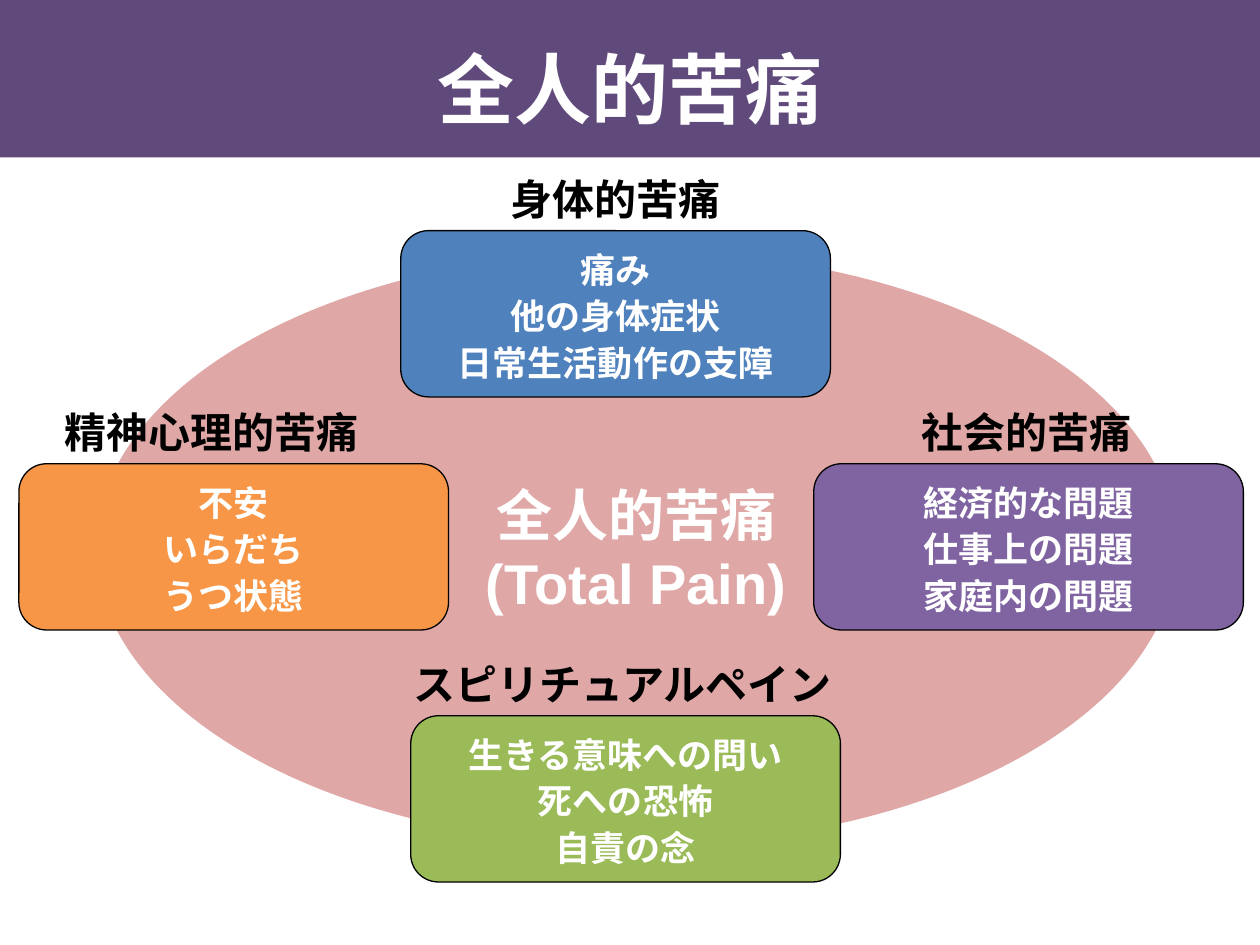
"""Build the slide on the four sides of total pain."""
from lxml.etree import SubElement
from pptx import Presentation
from pptx.dml.color import RGBColor as RGB
from pptx.enum.shapes import MSO_SHAPE as Kind
from pptx.enum.text import MSO_ANCHOR as Anchor, MSO_AUTO_SIZE as Fit, PP_ALIGN as Align
from pptx.oxml.ns import qn
from pptx.util import Pt

WHITE = RGB(255, 255, 255)
BLACK = RGB(0, 0, 0)
PLUM = RGB(0x60, 0x4A, 0x7B)
RED = RGB(0xC0, 0x50, 0x4D)
BLUE = RGB(0x4F, 0x81, 0xBD)
ORANGE = RGB(0xF7, 0x96, 0x46)
PURPLE = RGB(0x80, 0x64, 0xA2)
GREEN = RGB(0x9B, 0xBB, 0x59)
NOTO = "Noto Sans CJK JP"
ARIAL = "Arial"
CARD_W, CARD_H = 245.5, 95
LABEL_H = 36
CARDS = [
    (229, 131.8, BLUE, ARIAL, 284.4, "身体的苦痛",
     ["痛み", "他の身体症状", "日常生活動作の支障"]),
    (10.8, 265, ORANGE, ARIAL, 29.5, "精神心理的苦痛",
     ["不安", "いらだち", "うつ状態"]),
    (465, 265, PURPLE, NOTO, 519.8, "社会的苦痛",
     ["経済的な問題", "仕事上の問題", "家庭内の問題"]),
    (234.7, 409, GREEN, ARIAL, 229, "スピリチュアルペイン",
     ["生きる意味への問い", "死への恐怖", "自責の念"]),
]


def write(shape, lines, size, color, face=NOTO, align=Align.CENTER, space=None,
          anchor=Anchor.MIDDLE, wrap=True):
    """Fill a shape with bold lines of text."""
    frame = shape.text_frame
    frame.word_wrap, frame.vertical_anchor = wrap, anchor
    frame.text = "\n".join(lines)
    style = {"size": Pt(size), "name": face, "bold": True}
    for para in frame.paragraphs:
        para.alignment = align
        if space:
            para.line_spacing = space
        for run in para.runs:
            for key, value in style.items():
                setattr(run.font, key, value)
            run.font.color.rgb = color
            SubElement(run.font._element, qn("a:ea"), typeface=NOTO)


def add_form(shapes, kind, box, fill, line=None):
    """Add a filled preset shape, outlined if a line colour is given."""
    form = shapes.add_shape(kind, *map(Pt, box))
    form.shadow.inherit = False
    form.fill.solid()
    form.fill.fore_color.rgb = fill
    if line is None:
        form.line.fill.background()
    else:
        form.line.color.rgb = line
        form.line.width = Pt(0.75)
    return form


def add_core(shapes):
    """Add the half-clear ellipse behind the cards."""
    core = add_form(shapes, Kind.OVAL, (54.7, 143.3, 617.8, 339.8), RED)
    tint = core.fill._xPr.find(".//" + qn("a:srgbClr"))
    SubElement(tint, qn("a:alpha"), val="50000")
    write(core, ["全人的苦痛", "(Total Pain)"], 32, WHITE, ARIAL)


def add_card(shapes, left, top, fill, face, edge, label, lines):
    """Add a group of one card and the label above it."""
    group = shapes.add_group_shape().shapes
    card = add_form(group, Kind.ROUNDED_RECTANGLE, (left, top, CARD_W, CARD_H), fill, BLACK)
    write(card, lines, 20, WHITE, face, space=1.1)
    width = 24.3 * len(label) + 14
    head = group.add_textbox(Pt(edge), Pt(top - LABEL_H), Pt(width), Pt(LABEL_H))
    write(head, [label], 24, BLACK, align=Align.LEFT, anchor=Anchor.TOP, wrap=False)
    head.text_frame.auto_size = Fit.SHAPE_TO_FIT_TEXT


def main():
    """Build and save the slide."""
    deck = Presentation()
    deck.slide_width, deck.slide_height = Pt(720), Pt(540)
    shapes = deck.slides.add_slide(deck.slide_layouts[6]).shapes
    add_form(shapes, Kind.RECTANGLE, (0, 0, 720, 90), PLUM)
    add_core(shapes)
    title = shapes.add_textbox(*map(Pt, (36, 11.5, 648, 68.4)))
    write(title, ["全人的苦痛"], 44, WHITE, anchor=Anchor.BOTTOM)
    for card in CARDS:
        add_card(shapes, *card)
    deck.save("out.pptx")


if __name__ == "__main__":
    main()
